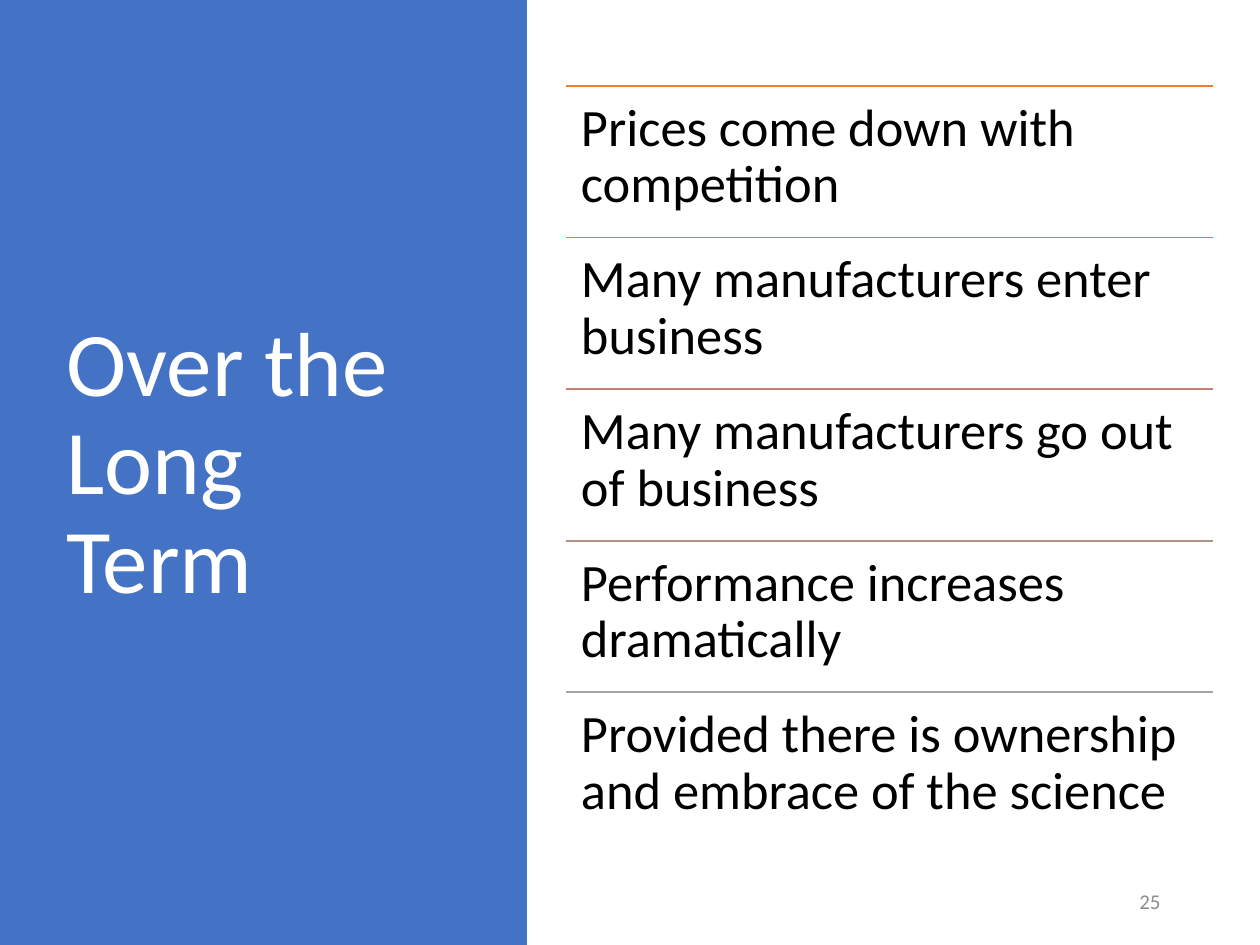
from lxml import etree
from pptx import Presentation
from pptx import util as u
from pptx.dml.color import RGBColor
from pptx.enum import shapes, text
from pptx.oxml import ns

EMU_PER_PX = 914400 / 126
FONT = "Calibri"
POINTS = [
    ("Prices come down with competition", "ED7D31"),
    ("Many manufacturers enter business", "D87A51"),
    ("Many manufacturers go out of business", "C48170"),
    ("Performance increases dramatically", "B4908B"),
    ("Provided there is ownership and embrace of the science", "A5A5A5"),
]


def px(length):
    return u.Emu(round(length * EMU_PER_PX))


def color(value):
    return RGBColor.from_string(value)


def set_all(target, values):
    for name, value in values.items():
        setattr(target, name, value)


def write(box, wording, size, fill, frame_format, para_format):
    """Fill a text box or placeholder with one formatted paragraph."""
    frame = box.text_frame
    set_all(frame, {"word_wrap": True, "auto_size": text.MSO_AUTO_SIZE.NONE, **frame_format})
    para = frame.paragraphs[0]
    set_all(para, para_format)
    span = para.add_run()
    span.text = wording
    set_all(span.font, {"name": FONT, "size": u.Pt(size)})
    span.font.color.rgb = color(fill)


def add_title_panel(page, left, top, width, height):
    panel = page.shapes.add_shape(
        shapes.MSO_SHAPE.RECTANGLE, px(left), px(top), px(width), px(height))
    panel.shadow.inherit = False
    panel.fill.solid()
    panel.fill.fore_color.rgb = color("4472C4")
    panel.line.fill.background()

    # The title sits in front of the panel
    title = page.shapes.title
    title.element.addprevious(panel.element)
    set_all(title, {"left": px(left + 54), "top": px(top + 86),
                    "width": px(393), "height": px(height - 186)})
    write(title, "Over the Long Term", 52, "FFFFFF",
          {"vertical_anchor": text.MSO_ANCHOR.MIDDLE},
          {"alignment": text.PP_ALIGN.LEFT, "line_spacing": 0.9})


def add_point_list(page, left, top, width, height):
    group = page.shapes.add_group_shape()
    row_height = height / len(POINTS)
    margins = dict.fromkeys(
        ("margin_left", "margin_top", "margin_right", "margin_bottom"), px(15))
    for index, (wording, line_color) in enumerate(POINTS):
        row_top = top + index * row_height
        # Rule above the row
        rule = group.shapes.add_connector(
            shapes.MSO_CONNECTOR.STRAIGHT,
            px(left), px(row_top), px(left + width), px(row_top))
        rule.line.color.rgb = color(line_color)
        rule.line.width = u.Pt(1)
        etree.SubElement(rule.element.spPr, ns.qn("a:effectLst"))
        # Row text
        box = group.shapes.add_textbox(px(left), px(row_top), px(width), px(row_height))
        write(box, wording, 30, "000000",
              {"vertical_anchor": text.MSO_ANCHOR.TOP, **margins},
              {"line_spacing": 0.9})


def add_page_number(page, left, top, width, height):
    box = page.shapes.add_textbox(px(left), px(top), px(width), px(height))
    write(box, "25", 12, "8C8C8C",
          {"vertical_anchor": text.MSO_ANCHOR.MIDDLE},
          {"alignment": text.PP_ALIGN.RIGHT, "space_after": u.Pt(6)})


def main():
    deck = Presentation()
    set_all(deck, {"slide_width": px(1260), "slide_height": px(945)})
    page = deck.slides.add_slide(deck.slide_layouts.get_by_name("Title Only"))
    add_title_panel(page, 0, 0, 527, 945)
    add_page_number(page, 890, 876, 283, 50)
    add_point_list(page, 566, 86, 647, 758)
    deck.save("out.pptx")


if __name__ == "__main__":
    main()
